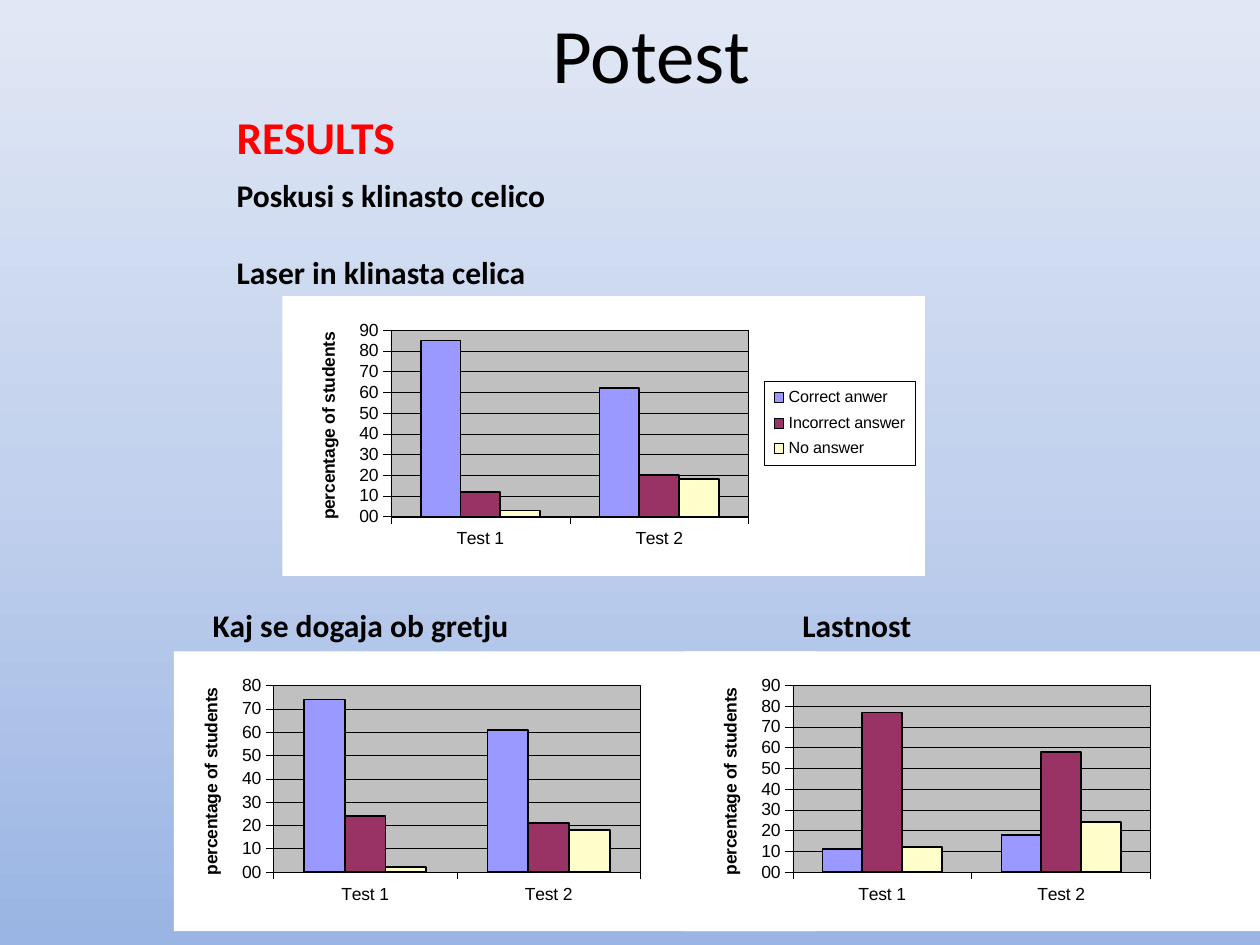
from lxml import etree
from pptx import Presentation
from pptx.chart.data import CategoryChartData
from pptx.dml.color import RGBColor
from pptx.enum.chart import XL_CHART_TYPE, XL_LEGEND_POSITION, XL_TICK_MARK
from pptx.enum.text import PP_ALIGN
from pptx.oxml import parse_xml
from pptx.oxml.ns import nsdecls, qn
from pptx.util import Inches, Pt

BLACK = RGBColor(0x00, 0x00, 0x00)
RED = RGBColor(0xFF, 0x00, 0x00)
WHITE = RGBColor(0xFF, 0xFF, 0xFF)
GREY = RGBColor(0xC0, 0xC0, 0xC0)
SERIES_COLORS = [RGBColor(0x99, 0x99, 0xFF), RGBColor(0x99, 0x33, 0x66), RGBColor(0xFF, 0xFF, 0xCC)]
BACKGROUND = [(0, RGBColor(0x9A, 0xB5, 0xE4)), (50, RGBColor(0xC2, 0xD1, 0xED)),
              (100, RGBColor(0xE1, 0xE8, 0xF5))]


def layout_xml(target=None, **place):
    """Manual layout in fractions of the chart: x, y and optionally w, h."""
    lay = etree.Element(qn("c:layout"))
    manual = etree.SubElement(lay, qn("c:manualLayout"))
    if target:
        etree.SubElement(manual, qn("c:layoutTarget"), val=target)
    for key in ("xMode", "yMode"):
        etree.SubElement(manual, qn("c:" + key), val="edge")
    for key, value in place.items():
        etree.SubElement(manual, qn("c:" + key), val=f"{value:.3f}")
    return lay


def area_xml(fill, line=None):
    """Shape properties for a chart part: solid fill, thin line or none."""
    paint = '<a:solidFill><a:srgbClr val="{}"/></a:solidFill>'
    return parse_xml(f'<c:spPr {nsdecls("c", "a")}>{paint.format(fill)}<a:ln w="3175">'
                     f'{paint.format(line) if line else "<a:noFill/>"}</a:ln></c:spPr>')


prs = Presentation()
prs.slide_width, prs.slide_height = Inches(10), Inches(7.5)
s = prs.slides.add_slide(prs.slide_layouts[6])

# Background, lightest at the top
s.background.fill.gradient()
grad = next(s.element.iter(qn("a:gradFill")))
for child in list(grad):
    grad.remove(child)
stops = etree.SubElement(grad, qn("a:gsLst"))
for pos, color in BACKGROUND:
    stop = etree.SubElement(stops, qn("a:gs"), pos=str(pos * 1000))
    etree.SubElement(stop, qn("a:srgbClr"), val=str(color))
etree.SubElement(grad, qn("a:lin"), ang=str(270 * 60000), scaled="0")

# Headings: left, top, width, height, lines, size, bold, colour, alignment
headings = [
    (1.78, 0.82, 5.24, 0.53, ["RESULTS"], 26, True, RED, PP_ALIGN.LEFT),
    (1.78, 1.35, 7.31, 1.01, ["Poskusi s klinasto celico", "Laser in klinasta celica"],
     18, True, BLACK, PP_ALIGN.LEFT),
    (1.59, 4.76, 6.97, 0.4, ["Kaj se dogaja ob gretju\tLastnost"], 18, True, BLACK, PP_ALIGN.LEFT),
    (0.67, 0, 9, 1.25, ["Potest"], 44, False, BLACK, PP_ALIGN.CENTER),
]
for left, top, width, height, lines, size, bold, color, align in headings:
    tf = s.shapes.add_textbox(Inches(left), Inches(top), Inches(width), Inches(height)).text_frame
    tf.word_wrap = True
    for i, line in enumerate(lines):
        p = tf.paragraphs[0] if i == 0 else tf.add_paragraph()
        p.text = line
        p.alignment = align
        if i:
            p.space_before = Pt(22)
        if "\t" in line:
            tabs = etree.SubElement(p._p.get_or_add_pPr(), qn("a:tabLst"))
            etree.SubElement(tabs, qn("a:tab"), pos=str(Inches(4.68)), algn="l")
        for r in p.runs:
            r.font.name, r.font.size, r.font.bold = "Calibri", Pt(size), bold
            r.font.color.rgb = color

# Charts: left, top, axis maximum, plot left, plot width, series names, values, legend
answers = ["Correct anwer", "Incorrect answer", "No answer"]
numbered = ["Series 1", "Series 2", "Series 3"]
charts = [
    (2.24, 2.35, 90, 0.169, 0.557, answers, [(85, 62), (12, 20), (3, 18)], True),
    (1.38, 5.17, 80, 0.155, 0.571, numbered, [(74, 61), (24, 21), (2, 18)], False),
    (5.43, 5.17, 90, 0.169, 0.557, numbered, [(11, 18), (77, 58), (12, 24)], False),
]
for left, top, maximum, plot_x, plot_w, names, values, has_legend in charts:
    data = CategoryChartData()
    data.categories = ["Test 1", "Test 2"]
    for name, vals in zip(names, values):
        data.add_series(name, vals)
    chart = s.shapes.add_chart(XL_CHART_TYPE.COLUMN_CLUSTERED, Inches(left), Inches(top),
                               Inches(5.1), Inches(2.22), data).chart
    chart.has_title = False
    chart.font.name, chart.font.size = "Arial", Pt(10)
    chart.font.color.rgb = BLACK

    plot = chart.plots[0]
    plot.gap_width, plot.overlap, plot.vary_by_categories = 150, 0, False
    for ser, color in zip(plot.series, SERIES_COLORS):
        ser.format.fill.solid()
        ser.format.fill.fore_color.rgb = color
        ser.format.line.color.rgb = BLACK
        ser.format.line.width = Pt(1)

    val_axis = chart.value_axis
    val_axis.minimum_scale, val_axis.maximum_scale, val_axis.major_unit = 0, maximum, 10
    val_axis.tick_labels.number_format = "#,#00"
    val_axis.tick_labels.number_format_is_linked = False
    val_axis.has_major_gridlines = True
    for axis in (chart.category_axis, val_axis):
        axis.major_tick_mark = XL_TICK_MARK.OUTSIDE
        axis.minor_tick_mark = XL_TICK_MARK.NONE
        axis.tick_labels.font.name, axis.tick_labels.font.size = "Arial", Pt(10)
        axis.tick_labels.font.color.rgb = BLACK
    for part in (chart.category_axis, val_axis, val_axis.major_gridlines):
        part.format.line.color.rgb = BLACK
        part.format.line.width = Pt(0.25)

    title = val_axis.axis_title
    title.text_frame.text = "percentage of students"
    font = title.text_frame.paragraphs[0].runs[0].font
    font.name, font.size, font.bold = "Arial", Pt(10), True
    font.color.rgb = BLACK

    chart.has_legend = has_legend
    space = chart.element
    plot_area = next(space.iter(qn("c:plotArea")))
    for lay in list(space.iter(qn("c:layout"))):
        lay.getparent().remove(lay)
    plot_area.insert(0, layout_xml("inner", x=plot_x, y=0.122, w=plot_w, h=0.667))
    plot_area.append(area_xml(GREY, BLACK))
    next(space.iter(qn("c:title"))).find(qn("c:tx")).addnext(layout_xml(x=plot_x - 0.12, y=0.118))
    space.find(qn("c:chart")).addnext(area_xml(WHITE))

    if has_legend:
        legend = chart.legend
        legend.position = XL_LEGEND_POSITION.RIGHT
        legend.include_in_layout = False
        legend.font.name, legend.font.size = "Arial", Pt(9.2)
        legend.font.color.rgb = BLACK
        node = next(space.iter(qn("c:legend")))
        node.find(qn("c:legendPos")).addnext(layout_xml(x=0.75, y=0.305, w=0.235, h=0.3))
        node.find(qn("c:txPr")).addprevious(area_xml(WHITE, BLACK))

prs.save("out.pptx")
